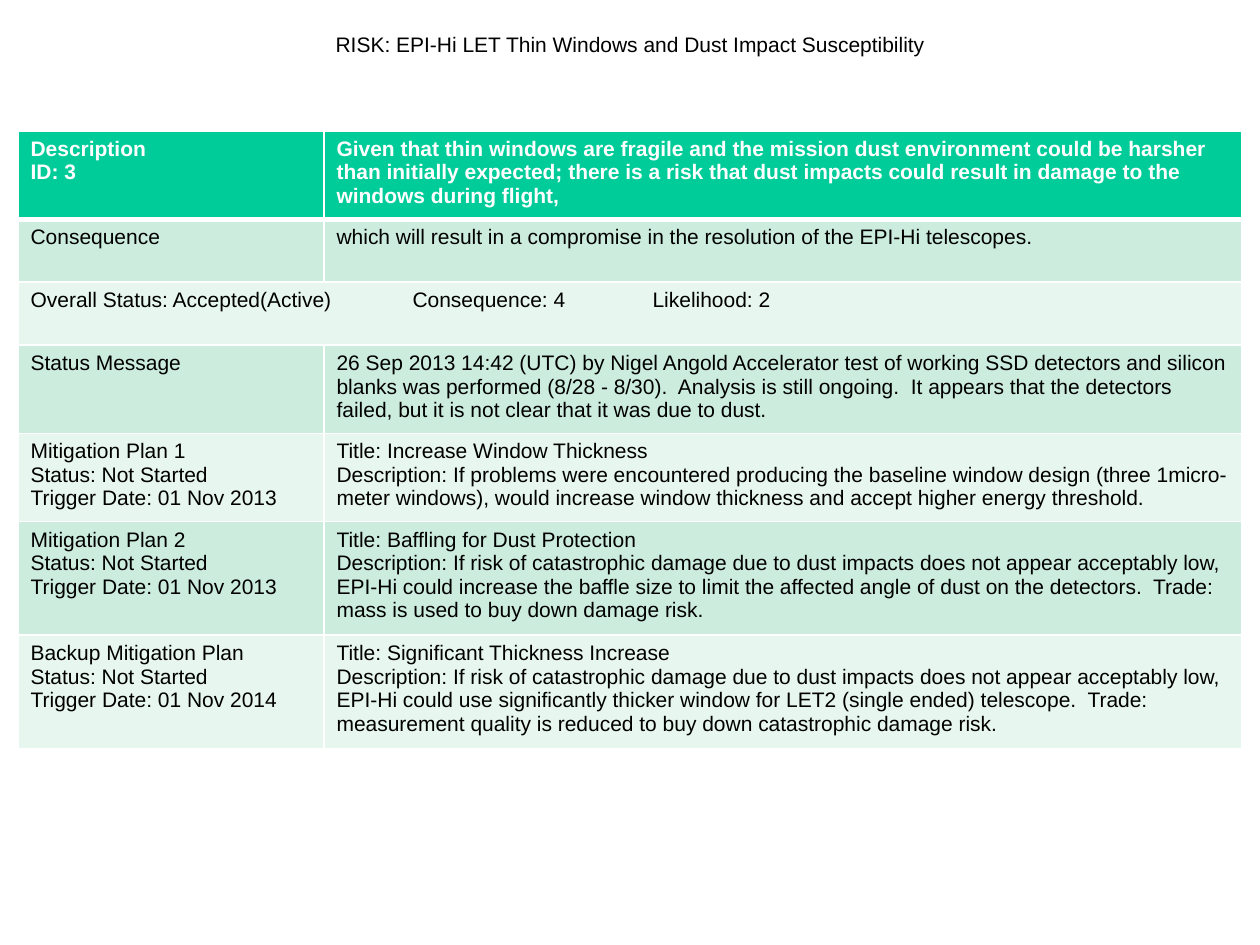
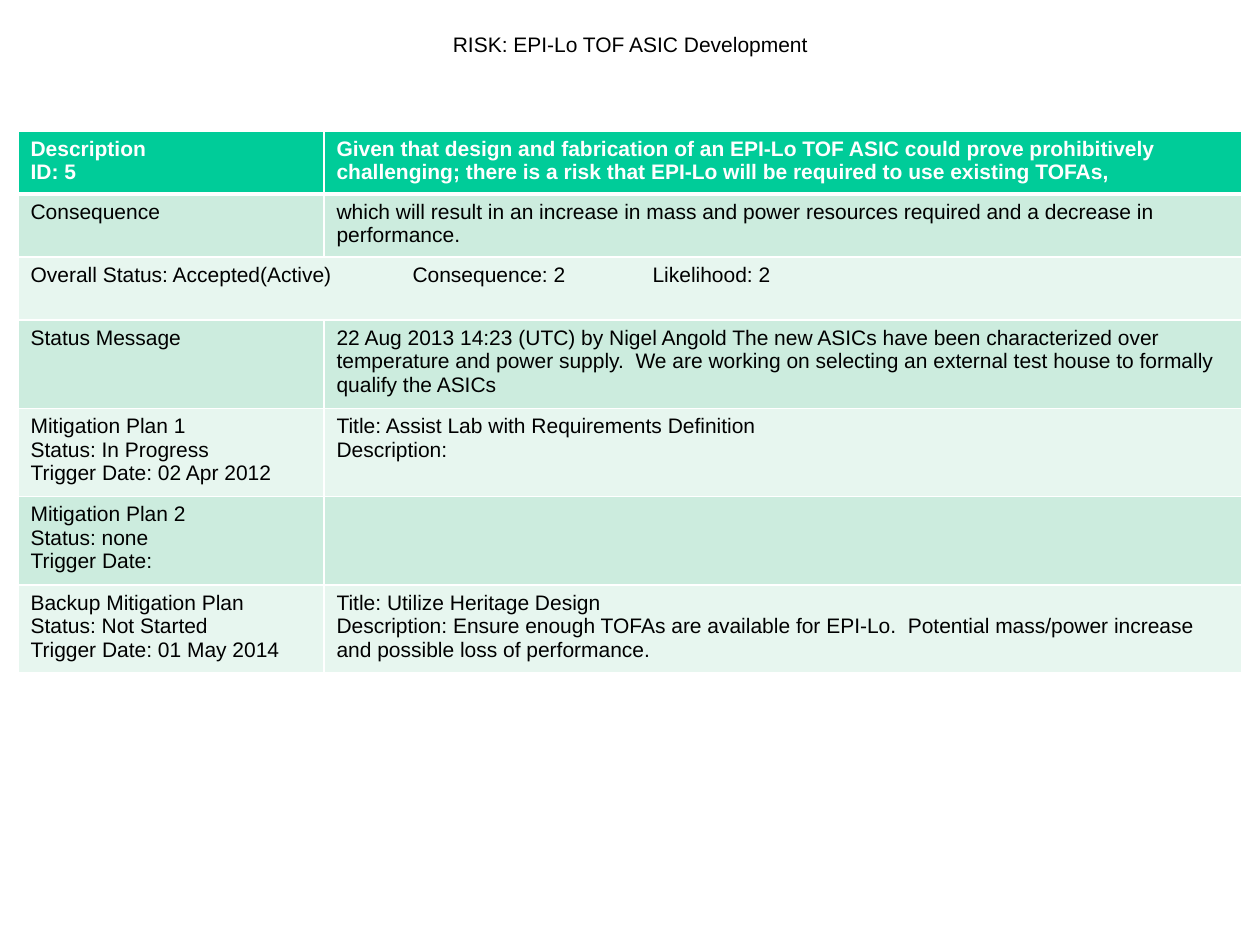
import dataclasses

import lxml.etree
import pptx
import pptx.dml.color
import pptx.enum.text
import pptx.oxml.ns
import pptx.util

PX = 914400 // 126  # EMU in one px


@dataclasses.dataclass(frozen=True)
class Theme:
    font: str = "Arial"
    size: int = 12
    ink: str = "000000"
    white: str = "FFFFFF"
    header: str = "00CC99"
    bands: tuple = ("CCECDE", "E7F6EF")
    thin: int = 1
    thick: int = 3


class RiskDeck:
    def __init__(self, theme):
        self.theme = theme
        self.deck = pptx.Presentation()
        self.deck.slide_width = 1260 * PX
        self.deck.slide_height = 945 * PX
        self.page = None

    def new_page(self):
        self.page = self.deck.slides.add_slide(self.deck.slide_layouts[6])

    def add_lines(self, frame, lines, color, bold=False, align=None):
        for index, line in enumerate(lines):
            para = frame.paragraphs[0] if index == 0 else frame.add_paragraph()
            para.alignment = align
            span = para.add_run()
            span.text = line
            span.font.name = self.theme.font
            span.font.size = pptx.util.Pt(self.theme.size)
            span.font.bold = bold
            span.font.color.rgb = pptx.dml.color.RGBColor.from_string(color)

    def title(self, text):
        box = self.page.shapes.add_textbox(95 * PX, 1 * PX, 1071 * PX, 87 * PX)
        frame = box.text_frame
        frame.word_wrap = True
        frame.vertical_anchor = pptx.enum.text.MSO_ANCHOR.MIDDLE
        self.add_lines(frame, [text], self.theme.ink,
                       align=pptx.enum.text.PP_ALIGN.CENTER)

    def borders(self, cell, top, bottom):
        name = pptx.oxml.ns.qn
        properties = cell._tc.get_or_add_tcPr()
        widths = {"L": self.theme.thin, "R": self.theme.thin, "T": top, "B": bottom}
        for side, width in widths.items():
            line = lxml.etree.SubElement(properties, name(f"a:ln{side}"),
                                         w=str(pptx.util.Pt(width)))
            fill = lxml.etree.SubElement(line, name("a:solidFill"))
            lxml.etree.SubElement(fill, name("a:srgbClr"), val=self.theme.white)

    def tab_stops(self, para, stops):
        name = pptx.oxml.ns.qn
        tabs = lxml.etree.SubElement(para._p.get_or_add_pPr(), name("a:tabLst"))
        for stop in stops:
            lxml.etree.SubElement(tabs, name("a:tab"), pos=str(stop * PX), algn="l")

    def table(self, rows):
        """Each row is a pair of line lists; a single list spans both columns."""
        theme = self.theme
        row_height = 63
        grid = self.page.shapes.add_table(
            len(rows), 2, 18 * PX, 131 * PX, 1224 * PX,
            len(rows) * row_height * PX).table
        for column, width in zip(grid.columns, (306, 918)):
            column.width = width * PX
        for r, row in enumerate(rows):
            grid.rows[r].height = row_height * PX
            is_header = r == 0
            fill = theme.header if is_header else theme.bands[(r - 1) % 2]
            for c in range(2):
                cell = grid.cell(r, c)
                self.borders(cell, theme.thick if r == 1 else theme.thin,
                             theme.thick if is_header else theme.thin)
                cell.fill.solid()
                cell.fill.fore_color.rgb = pptx.dml.color.RGBColor.from_string(fill)
                if c < len(row):
                    self.add_lines(cell.text_frame, row[c],
                                   theme.white if is_header else theme.ink, is_header)
            if len(row) == 1:
                grid.cell(r, 0).merge(grid.cell(r, 1))
                self.tab_stops(grid.cell(r, 0).text_frame.paragraphs[0], (382, 622))

    def risk_page(self, risk):
        self.new_page()
        self.title(f"RISK: {risk['name']}")
        rows = [
            (["Description", f"ID: {risk['id']}"], [risk["given"]]),
            (["Consequence"], [risk["result"]]),
            (["Overall Status: Accepted(Active)"
              f"\tConsequence: {risk['consequence']}"
              f"\tLikelihood: {risk['likelihood']}"],),
            (["Status Message"], [risk["message"]]),
        ]
        plan_names = ("Mitigation Plan 1", "Mitigation Plan 2", "Backup Mitigation Plan")
        for plan_name, (status, date, heading, detail) in zip(plan_names, risk["plans"]):
            label = [plan_name, f"Status: {status}", f"Trigger Date: {date}".rstrip()]
            body = [f"Title: {heading}", f"Description: {detail}".rstrip()]
            rows.append((label, body if heading else []))
        self.table(rows)


# Risks, one per slide; a plan is status, trigger date, title, description
RISKS = [
    {
        "name": "EPI-Hi LET Thin Windows and Dust Impact Susceptibility",
        "id": 3, "consequence": 4, "likelihood": 2,
        "given": "Given that thin windows are fragile and the mission dust environment "
                 "could be harsher than initially expected; there is a risk that dust "
                 "impacts could result in damage to the windows during flight,",
        "result": "which will result in a compromise in the resolution of the "
                  "EPI-Hi telescopes.",
        "message": "26 Sep 2013 14:42 (UTC) by Nigel Angold Accelerator test of working "
                   "SSD detectors and silicon blanks was performed (8/28 - 8/30).  "
                   "Analysis is still ongoing.  It appears that the detectors failed, "
                   "but it is not clear that it was due to dust.",
        "plans": [
            ("Not Started", "01 Nov 2013", "Increase Window Thickness",
             "If problems were encountered producing the baseline window design "
             "(three 1micro-meter windows), would increase window thickness and "
             "accept higher energy threshold."),
            ("Not Started", "01 Nov 2013", "Baffling for Dust Protection",
             "If risk of catastrophic damage due to dust impacts does not appear "
             "acceptably low, EPI-Hi could increase the baffle size to limit the "
             "affected angle of dust on the detectors.  Trade: mass is used to buy "
             "down damage risk."),
            ("Not Started", "01 Nov 2014", "Significant Thickness Increase",
             "If risk of catastrophic damage due to dust impacts does not appear "
             "acceptably low, EPI-Hi could use significantly thicker window for LET2 "
             "(single ended) telescope.  Trade: measurement quality is reduced to buy "
             "down catastrophic damage risk."),
        ],
    },
    {
        "name": "EPI-Lo TOF ASIC Development",
        "id": 5, "consequence": 2, "likelihood": 2,
        "given": "Given that design and fabrication of an EPI-Lo TOF ASIC could prove "
                 "prohibitively challenging; there is a risk that EPI-Lo will be "
                 "required to use existing TOFAs,",
        "result": "which will result in an increase in mass and power resources "
                  "required and a decrease in performance.",
        "message": "22 Aug 2013 14:23 (UTC) by Nigel Angold The new ASICs have been "
                   "characterized over temperature and power supply.  We are working on "
                   "selecting an external test house to formally qualify the ASICs",
        "plans": [
            ("In Progress", "02 Apr 2012", "Assist Lab with Requirements Definition", ""),
            ("none", "", "", ""),
            ("Not Started", "01 May 2014", "Utilize Heritage Design",
             "Ensure enough TOFAs are available for EPI-Lo.  Potential mass/power "
             "increase and possible loss of performance."),
        ],
    },
]


def main():
    risk_deck = RiskDeck(Theme())
    for risk in RISKS:
        risk_deck.risk_page(risk)
    risk_deck.deck.save("out.pptx")


if __name__ == "__main__":
    main()
